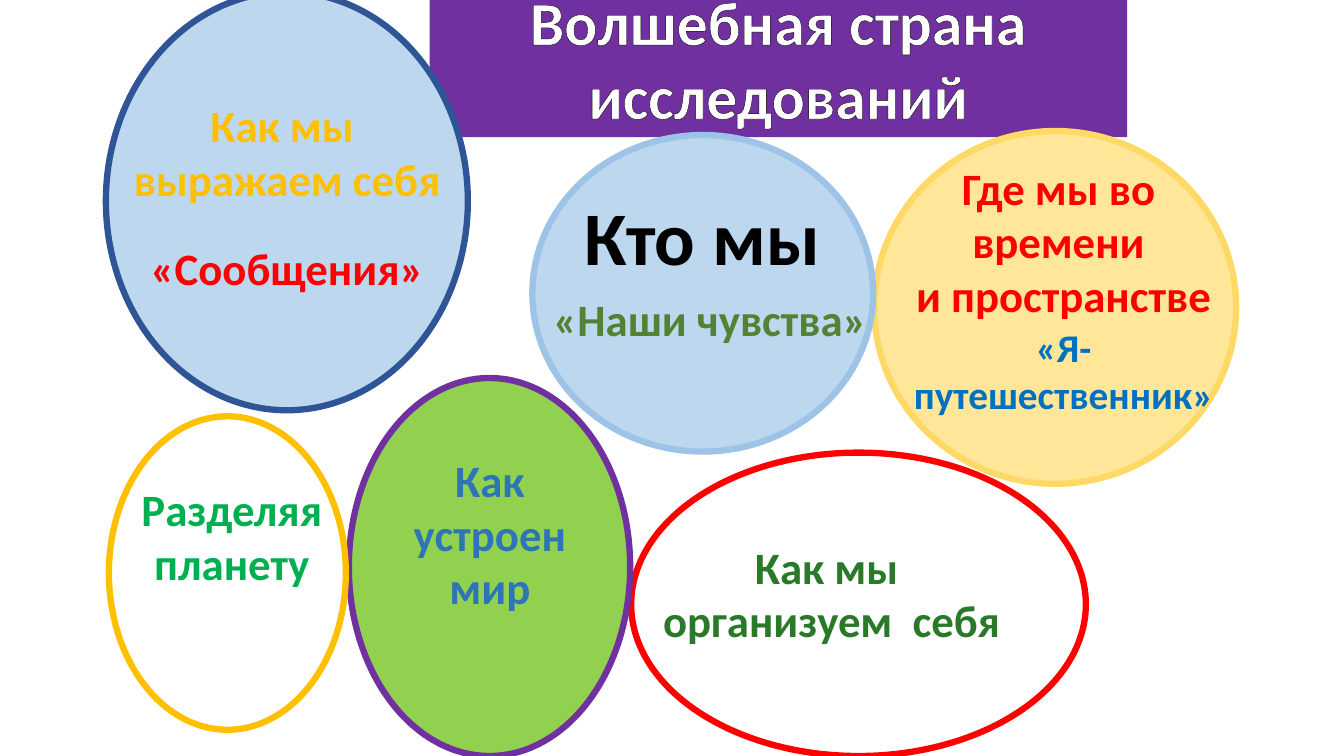
from dataclasses import dataclass

from lxml.etree import SubElement
from pptx import Presentation
from pptx.dml.color import RGBColor
from pptx.enum.shapes import MSO_SHAPE
from pptx.enum.text import MSO_AUTO_SIZE, PP_ALIGN
from pptx.oxml.ns import qn
from pptx.shapes.autoshape import Shape
from pptx.slide import Slide
from pptx.text.text import TextFrame
from pptx.util import Emu, Pt

EMU_PER_PX = 9144
SLIDE_WIDTH, SLIDE_HEIGHT = 1333, 750
OUTLINE_WIDTH = Pt(4.5)
TITLE_STROKE = Pt(0.8)

COLORS = {
    "white": "FFFFFF",
    "black": "000000",
    "purple": "7030A0",
    "cream": "FFE699",
    "sand": "FFD966",
    "red": "FF0000",
    "pale_blue": "BDD7EE",
    "navy": "2F5597",
    "sky": "9DC3E6",
    "lime": "92D050",
    "amber": "FFC000",
    "forest": "297929",
    "steel": "2E75B6",
    "green": "00B050",
    "blue": "0070C0",
    "olive": "548235",
}


@dataclass(frozen=True)
class Box:
    left: int
    top: int
    width: int
    height: int

    def emu(self) -> tuple[Emu, ...]:
        sides = (self.left, self.top, self.width, self.height)
        return tuple(Emu(side * EMU_PER_PX) for side in sides)


@dataclass(frozen=True)
class Bubble:
    box: Box
    outline: str
    fill: str | None = None


@dataclass(frozen=True)
class Label:
    box: Box
    lines: tuple[str, ...]
    color: str
    size: int = 32
    wrap: bool = True


TITLE = Label(Box(426, -22, 692, 158), ("Волшебная страна", "исследований"), "white", 44)

BUBBLES = (
    Bubble(Box(867, 130, 359, 350), "sand", "cream"),
    Bubble(Box(626, 449, 451, 301), "red"),
    Bubble(Box(105, -8, 359, 415), "navy", "pale_blue"),
    Bubble(Box(528, 134, 338, 314), "sky", "pale_blue"),
    Bubble(Box(346, 375, 279, 375), "purple", "lime"),
    Bubble(Box(108, 413, 235, 311), "amber"),
)

LABELS = (
    Label(Box(569, 183, 256, 101), ("Кто мы",), "black", 54, wrap=False),
    Label(Box(897, 154, 316, 172), ("Где мы во ", "времени ", "и пространстве"), "red", wrap=False),
    Label(Box(97, 92, 376, 118), ("Как мы ", "выражаем себя"), "amber"),
    Label(Box(637, 530, 376, 118), ("Как мы ", "организуем  себя"), "forest"),
    Label(Box(298, 444, 376, 172), ("Как", "устроен", "мир"), "steel"),
    Label(Box(42, 473, 376, 118), ("Разделяя", "планету"), "green"),
    Label(Box(97, 234, 376, 64), ("«Сообщения»",), "red"),
    Label(Box(867, 316, 376, 104), ("«Я-", "путешественник»"), "blue", 28),
    Label(Box(537, 284, 335, 64), ("«Наши чувства»",), "olive", wrap=False),
)


def rgb(name: str) -> RGBColor:
    return RGBColor.from_string(COLORS[name])


def write_label(frame: TextFrame, label: Label) -> None:
    frame.word_wrap = label.wrap
    frame.auto_size = MSO_AUTO_SIZE.SHAPE_TO_FIT_TEXT
    frame.text = "\n".join(label.lines)
    for line in frame.paragraphs:
        line.alignment = PP_ALIGN.CENTER
        line.font.name = "Calibri"
        line.font.size = Pt(label.size)
        line.font.bold = True
        line.font.color.rgb = rgb(label.color)


def add_plain_shape(slide: Slide, kind: MSO_SHAPE, box: Box, fill: str | None) -> Shape:
    shape = slide.shapes.add_shape(kind, *box.emu())
    shape.shadow.inherit = False
    if fill:
        shape.fill.solid()
        shape.fill.fore_color.rgb = rgb(fill)
    else:
        shape.fill.background()
    return shape


def stroke_letters(frame: TextFrame, color: str) -> None:
    for line in frame.paragraphs:
        for run in line.runs:
            stroke = SubElement(run._r.get_or_add_rPr(), qn("a:ln"), w=str(TITLE_STROKE))
            paint = SubElement(stroke, qn("a:solidFill"))
            SubElement(paint, qn("a:srgbClr"), val=COLORS[color])


def add_title(slide: Slide, title: Label) -> None:
    banner = add_plain_shape(slide, MSO_SHAPE.RECTANGLE, title.box, "purple")
    banner.line.fill.background()
    write_label(banner.text_frame, title)
    stroke_letters(banner.text_frame, "black")


def add_bubble(slide: Slide, bubble: Bubble) -> None:
    ellipse = add_plain_shape(slide, MSO_SHAPE.OVAL, bubble.box, bubble.fill)
    ellipse.line.color.rgb = rgb(bubble.outline)
    ellipse.line.width = OUTLINE_WIDTH


def add_label(slide: Slide, label: Label) -> None:
    write_label(slide.shapes.add_textbox(*label.box.emu()).text_frame, label)


def main() -> None:
    deck = Presentation()
    deck.slide_width = Emu(SLIDE_WIDTH * EMU_PER_PX)
    deck.slide_height = Emu(SLIDE_HEIGHT * EMU_PER_PX)
    slide = deck.slides.add_slide(deck.slide_layouts[6])
    add_title(slide, TITLE)
    for bubble in BUBBLES:
        add_bubble(slide, bubble)
    for label in LABELS:
        add_label(slide, label)
    deck.save("out.pptx")


if __name__ == "__main__":
    main()
